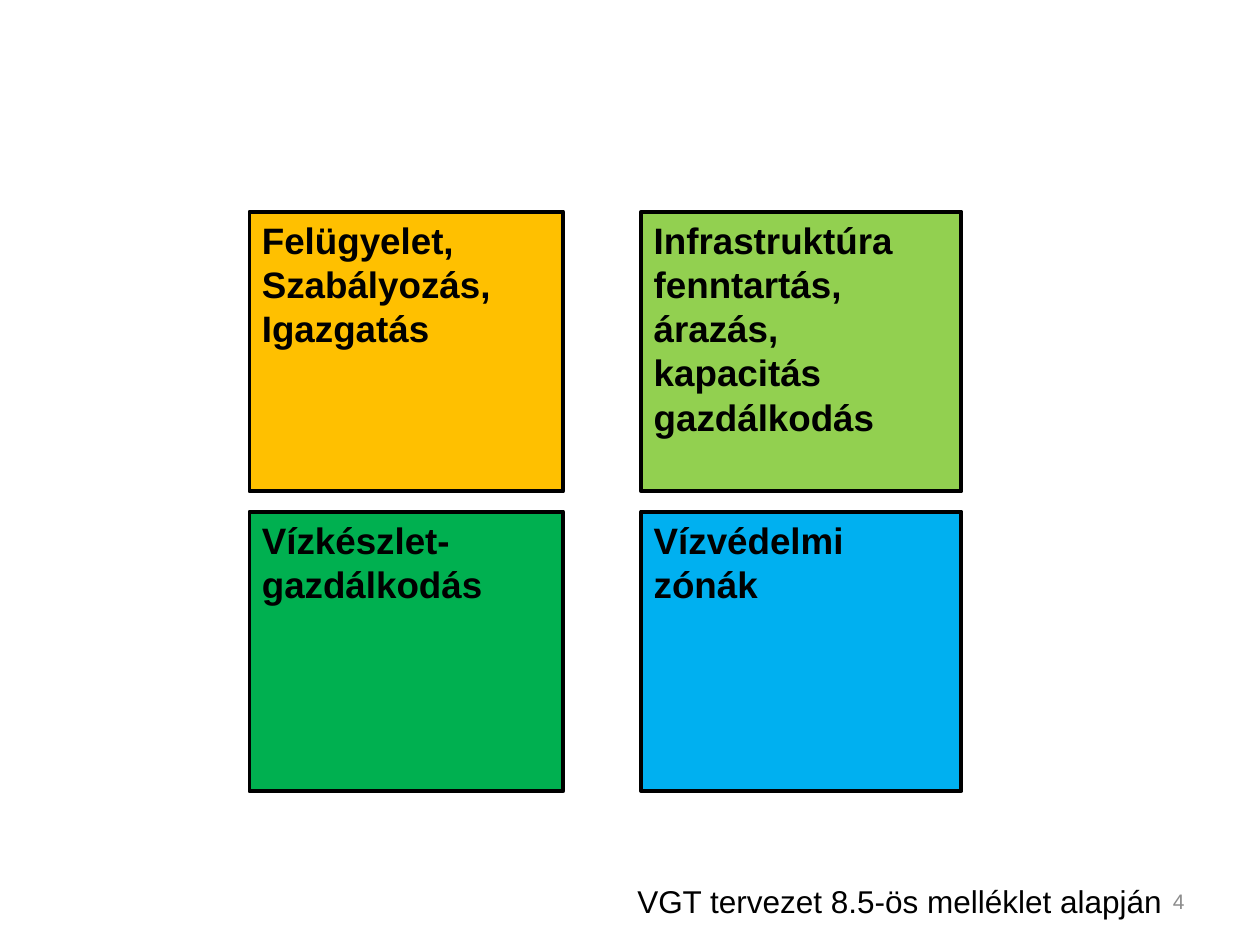
import pptx
import pptx.util
import pptx.dml.color
import pptx.enum.shapes
import pptx.enum.text
from dataclasses import dataclass

Inch = pptx.util.Inches
Align = pptx.enum.text.PP_ALIGN
Anchor = pptx.enum.text.MSO_ANCHOR


@dataclass(frozen=True)
class Theme:
    font: str = "Arial"
    ink: str = "000000"
    grey: str = "8C8C8C"
    gold: str = "FFC000"
    lime: str = "92D050"
    green: str = "00B050"
    blue: str = "00B0F0"
    head: int = 21
    note: int = 18
    small: int = 12
    edge: float = 2.25


THEME = Theme()

# Grid: (left, width) of each column, top of each row
COLS = [(1.98, 2.49), (5.09, 2.54)]
ROWS = [1.68, 4.06]
TALL = 2.22
FOOT, LOW = 6.95, 0.4

# Column, row, fill, paragraphs
CARDS = [
    (0, 0, THEME.gold, "Felügyelet,\nSzabályozás,\nIgazgatás"),
    (1, 0, THEME.lime,
     "Infrastruktúra fenntartás, árazás,\nkapacitás gazdálkodás"),
    (1, 1, THEME.blue, "Vízvédelmi zónák"),
    (0, 1, THEME.green, "Vízkészlet- gazdálkodás"),
]


def rgb(code):
    return pptx.dml.color.RGBColor.from_string(code)


def write(frame, text, size, ink, bold=False, align=Align.LEFT, wrap=True):
    frame.text = text
    frame.word_wrap = wrap
    for para in frame.paragraphs:
        para.alignment = align
        for run in para.runs:
            run.font.name = THEME.font
            run.font.size = pptx.util.Pt(size)
            run.font.bold = bold
            run.font.color.rgb = rgb(ink)


def card(slide, col, row, fill, text):
    left, wide = COLS[col]
    box = slide.shapes.add_shape(
        pptx.enum.shapes.MSO_SHAPE.RECTANGLE,
        Inch(left), Inch(ROWS[row]), Inch(wide), Inch(TALL))
    box.shadow.inherit = False
    box.fill.solid()
    box.fill.fore_color.rgb = rgb(fill)
    box.line.color.rgb = rgb(THEME.ink)
    box.line.width = pptx.util.Pt(THEME.edge)
    box.text_frame.vertical_anchor = Anchor.TOP
    write(box.text_frame, text, THEME.head, THEME.ink, bold=True)


def label(slide, left, wide, text, size, ink, anchor=Anchor.TOP, **style):
    box = slide.shapes.add_textbox(
        Inch(left), Inch(FOOT), Inch(wide), Inch(LOW))
    box.text_frame.vertical_anchor = anchor
    write(box.text_frame, text, size, ink, **style)


def main():
    deck = pptx.Presentation()
    deck.slide_width, deck.slide_height = Inch(10), Inch(7.5)
    slide = deck.slides.add_slide(deck.slide_layouts[6])

    # Four coloured cards
    for item in CARDS:
        card(slide, *item)

    # Page number and source note
    label(slide, 7.17, 2.33, "4", THEME.small, THEME.grey,
          anchor=Anchor.MIDDLE, align=Align.RIGHT)
    label(slide, 4.96, 4.4, "VGT tervezet 8.5-ös melléklet alapján",
          THEME.note, THEME.ink, wrap=False)

    deck.save("out.pptx")


if __name__ == "__main__":
    main()
